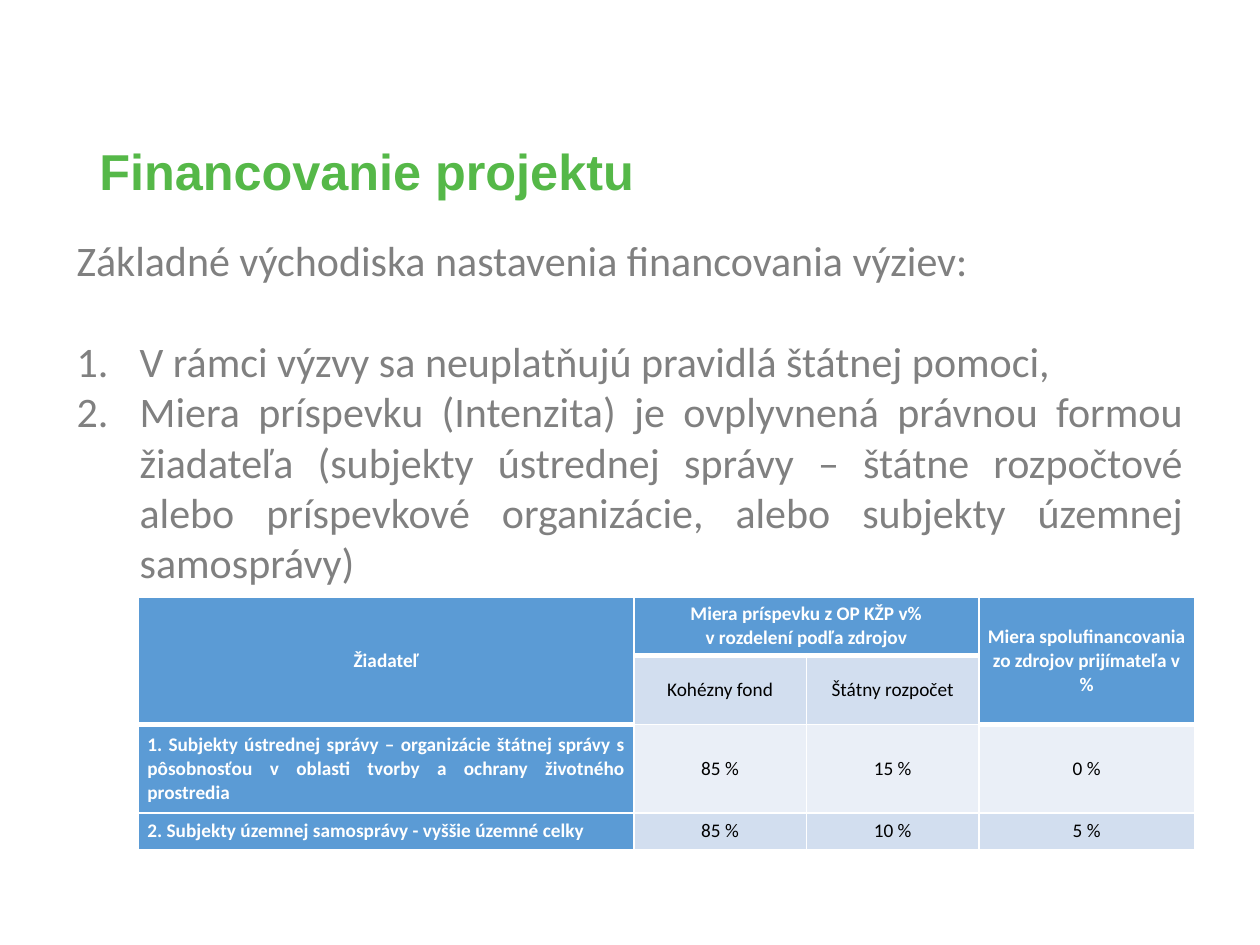
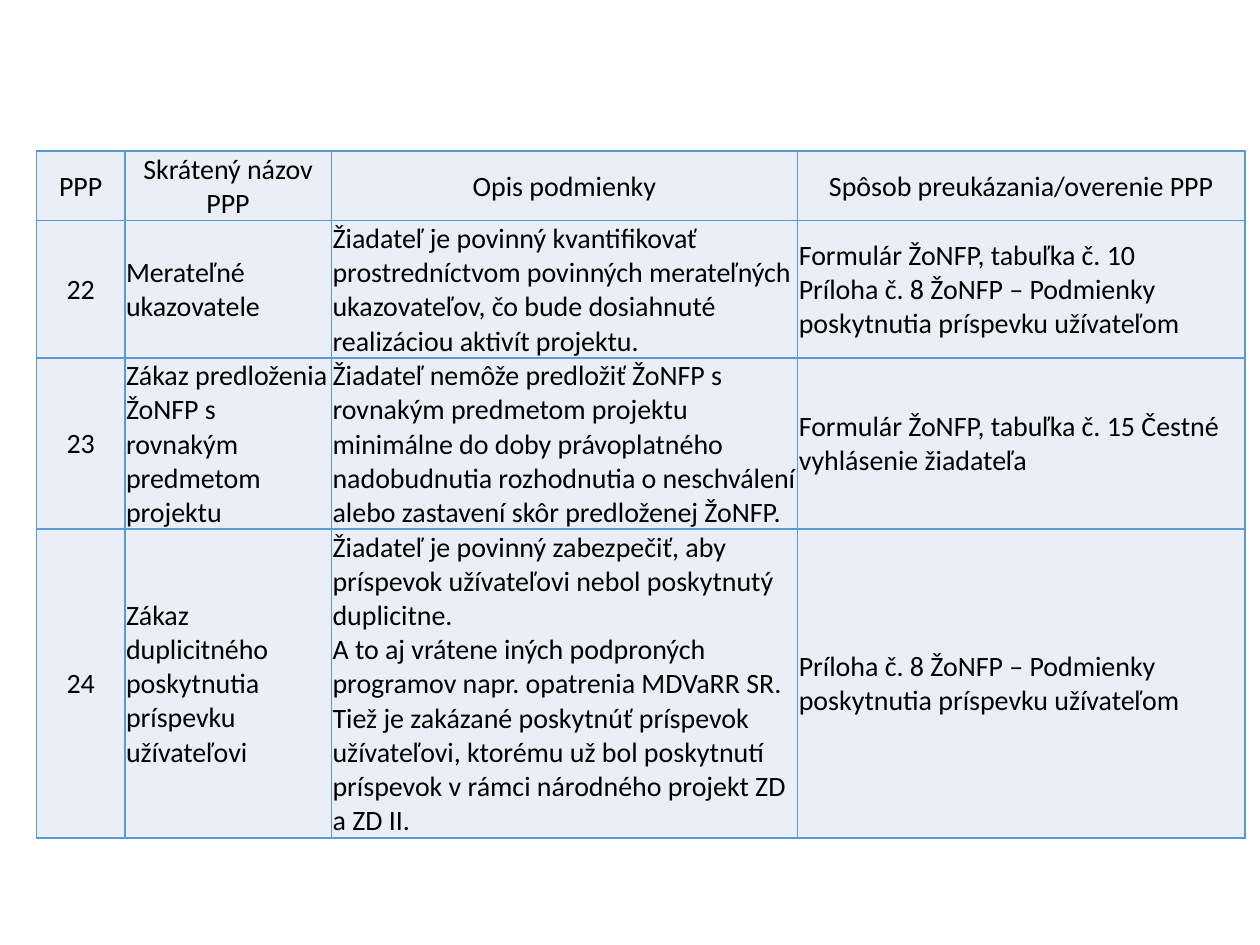
from lxml import etree
from pptx import Presentation
from pptx import util as u
from pptx.dml.color import RGBColor
from pptx.enum import text
from pptx.oxml import ns

HUES = {"green": "55B848", "grey": "808080", "blue": "5B9BD5", "mid": "D2DEEF",
        "pale": "EAEFF7", "white": "FFFFFF", "black": "000000"}
LEFT, MID, JUST = text.PP_ALIGN.LEFT, text.PP_ALIGN.CENTER, text.PP_ALIGN.JUSTIFY


def write(para, words, size, hue, align, bold=False, face="Calibri"):
    """Fill a paragraph with runs, breaking the line at each newline."""
    para.alignment = align
    for i, line in enumerate(words.split("\n")):
        if i:
            para.add_line_break()
        run = para.add_run()
        run.text = line
        run.font.size, run.font.name, run.font.bold = u.Pt(size), face, bold
        run.font.color.rgb = RGBColor.from_string(HUES[hue])


def style(cell, fill, line, widths, insets):
    """Give a cell its borders (left, right, top, bottom), fill and insets."""
    props = cell._tc.get_or_add_tcPr()
    for side, wide in zip("LRTB", widths):
        edge = etree.SubElement(props, ns.qn("a:ln" + side), w=str(u.Pt(wide)))
        solid = etree.SubElement(edge, ns.qn("a:solidFill"))
        etree.SubElement(solid, ns.qn("a:srgbClr"), val=HUES[line])
    cell.fill.solid()
    cell.fill.fore_color.rgb = RGBColor.from_string(HUES[fill])
    cell.vertical_anchor = text.MSO_ANCHOR.MIDDLE
    cell.margin_left, cell.margin_top, cell.margin_right, cell.margin_bottom = [
        u.Inches(n) for n in insets]


deck = Presentation()
deck.slide_width, deck.slide_height = u.Inches(10), u.Inches(7.5)
blank = deck.slide_layouts[6]
funds, terms = [deck.slides.add_slide(blank) for _ in range(2)]

# Slide 1: title
box = funds.shapes.add_textbox(*map(u.Inches, (0.69, 1.11, 8.62, 0.55)))
frame = box.text_frame
frame.word_wrap = True
frame.vertical_anchor = text.MSO_ANCHOR.MIDDLE
frame.paragraphs[0].line_spacing = 0.9
write(frame.paragraphs[0], "Financovanie projektu", 28.8, "green", JUST, True, "Arial")

# Slide 1: lead line and numbered points
box = funds.shapes.add_textbox(*map(u.Inches, (0.51, 1.81, 8.98, 2.93)))
frame = box.text_frame
frame.word_wrap = True
write(frame.paragraphs[0], "Základné východiska nastavenia financovania výziev:",
      24, "grey", JUST)
points = [
    "V rámci výzvy sa neuplatňujú pravidlá štátnej pomoci,",
    "Miera príspevku (Intenzita) je ovplyvnená právnou formou žiadateľa (subjekty "
    "ústrednej správy – štátne rozpočtové alebo príspevkové organizácie, alebo "
    "subjekty územnej samosprávy)",
]
for i, point in enumerate(points):
    para = frame.add_paragraph()
    props = para._p.get_or_add_pPr()
    props.set("marL", str(u.Inches(0.5)))
    props.set("indent", str(u.Inches(-0.5)))
    etree.SubElement(props, ns.qn("a:buFont"), typeface="+mj-lt")
    etree.SubElement(props, ns.qn("a:buAutoNum"), type="arabicPeriod")
    if i == 0:
        para.space_before = u.Pt(29)
    write(para, point, 24, "grey", JUST)

# Slide 1: rates table, None marks a cell covered by a merge
rates = [
    ["Žiadateľ", "Miera príspevku z OP KŽP v%\nv rozdelení podľa zdrojov", None,
     "Miera spolufinancovania zo zdrojov prijímateľa v %"],
    [None, "Kohézny fond", "Štátny rozpočet", None],
    ["1. Subjekty ústrednej správy – organizácie štátnej správy s pôsobnosťou "
     "v oblasti tvorby a ochrany životného prostredia", "85 %", "15 %", "0 %"],
    ["2. Subjekty územnej samosprávy - vyššie územné celky", "85 %", "10 %", "5 %"],
]
bands = ["blue", "mid", "pale", "mid"]
thick = {(0, 0), (0, 1), (0, 2), (0, 3), (1, 0), (1, 3)}

# Slide 2: terms table
rules = [
    ["PPP", "Skrátený názov PPP", "Opis podmienky", "Spôsob preukázania/overenie PPP"],
    ["22", "Merateľné ukazovatele",
     "Žiadateľ je povinný kvantifikovať prostredníctvom povinných merateľných "
     "ukazovateľov, čo bude dosiahnuté realizáciou aktivít projektu.",
     "Formulár ŽoNFP, tabuľka č. 10\n"
     "Príloha č. 8 ŽoNFP – Podmienky poskytnutia príspevku užívateľom"],
    ["23", "Zákaz predloženia ŽoNFP s rovnakým predmetom projektu",
     "Žiadateľ nemôže predložiť ŽoNFP s rovnakým predmetom projektu minimálne do doby "
     "právoplatného nadobudnutia rozhodnutia o neschválení alebo zastavení skôr "
     "predloženej ŽoNFP.",
     "Formulár ŽoNFP, tabuľka č. 15 Čestné vyhlásenie žiadateľa"],
    ["24", "Zákaz duplicitného poskytnutia príspevku užívateľovi",
     "Žiadateľ je povinný zabezpečiť, aby príspevok užívateľovi nebol poskytnutý "
     "duplicitne.\nA to aj vrátene iných podproných programov napr. opatrenia MDVaRR SR.\n"
     "Tiež je zakázané poskytnúť príspevok užívateľovi, ktorému už bol poskytnutí "
     "príspevok v rámci národného projekt ZD a ZD II.",
     "Príloha č. 8 ŽoNFP – Podmienky poskytnutia príspevku užívateľom"],
]

# Both grids: slide, texts, left, top, column widths, row heights
plans = [
    (funds, rates, 1.1, 4.74, [3.93, 1.37, 1.37, 1.71], [0.46, 0.54, 0.7, 0.29]),
    (terms, rules, 0.29, 1.2, [0.7, 1.64, 3.7, 3.55], [0.55, 1.09, 1.36, 2.45]),
]
for slide, texts, left, top, wides, highs in plans:
    size = (left, top, sum(wides), sum(highs))
    grid = slide.shapes.add_table(len(highs), len(wides), *map(u.Inches, size)).table
    grid.first_row = grid.horz_banding = False
    for col, wide in zip(grid.columns, wides):
        col.width = u.Inches(wide)
    for row, high in zip(grid.rows, highs):
        row.height = u.Inches(high)
    for r, line in enumerate(texts):
        for c, words in enumerate(line):
            cell = grid.cell(r, c)
            para = cell.text_frame.paragraphs[0]
            if slide is funds:
                head = r == 0 or c == 0 or words is None
                edges = (1, 1, 3 if (r - 1, c) in thick else 1, 3 if (r, c) in thick else 1)
                style(cell, "blue" if head else bands[r], "white", edges, (0.07, 0, 0.07, 0))
                if words:
                    para.space_before = para.space_after = u.Pt(3)
                    write(para, words, 11, "white" if head else "black",
                          JUST if c == 0 and r > 1 else MID, head)
            else:
                style(cell, "pale", "blue", (1, 1, 1, 1), (0.01, 0.01, 0.01, 0))
                write(para, words, 16, "black", MID if r == 0 or c == 0 else LEFT)
    if slide is funds:
        for start, end in [((0, 0), (1, 0)), ((0, 1), (0, 2)), ((0, 3), (1, 3))]:
            grid.cell(*start).merge(grid.cell(*end))

deck.save("out.pptx")
